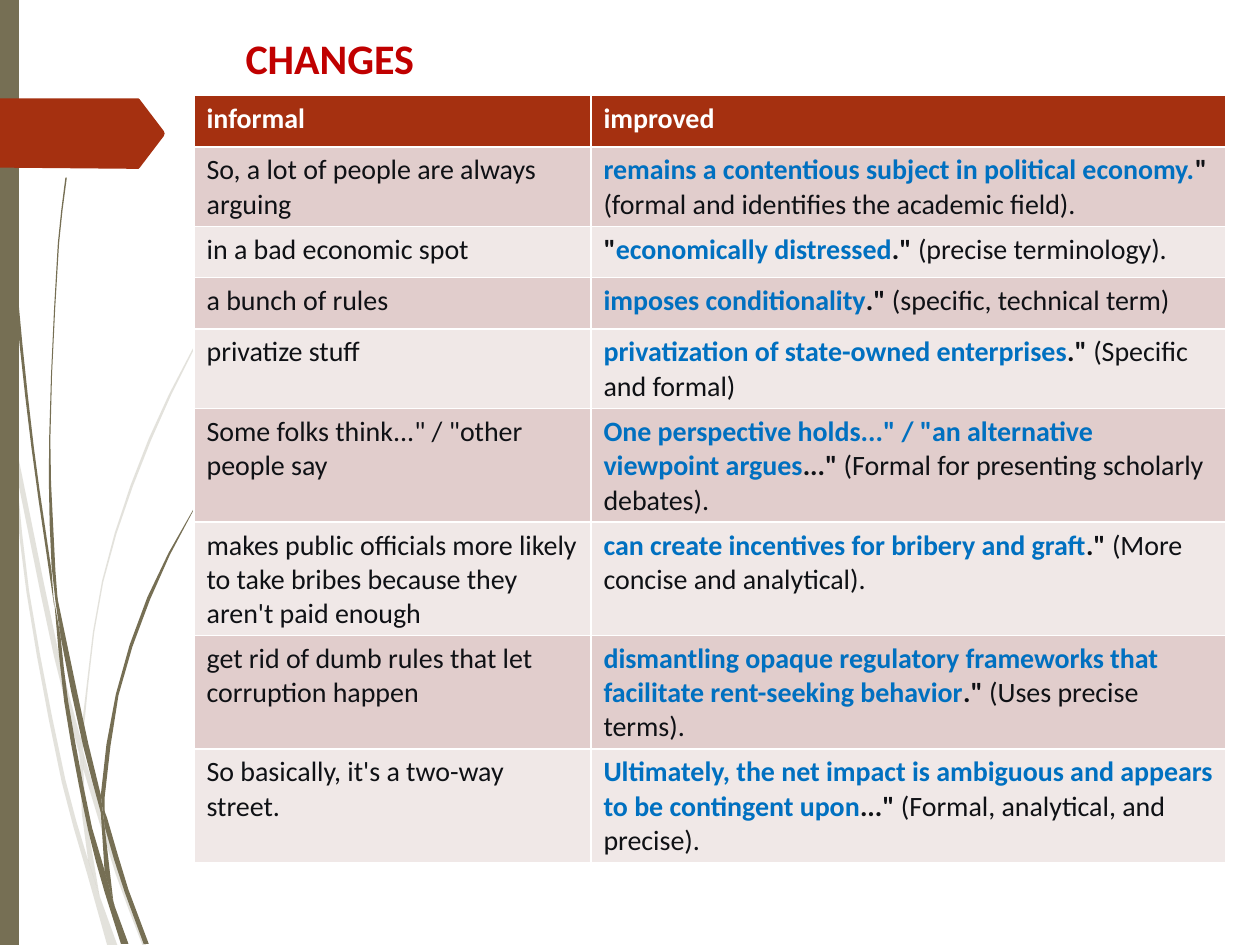
import math

import pptx
import pptx.dml.color
import pptx.enum.text
import pptx.oxml
import pptx.oxml.ns
import pptx.util
from pptx.enum.shapes import MSO_SHAPE

Pt = pptx.util.Pt

THEME = {
    "font": "Calibri", "title_size": 24, "cell_size": 16,
    "olive": "766F54", "rust": "A53010", "title": "C00000", "white": "FFFFFF",
    "ink": "0F1115", "accent": "0070C0", "bands": ("E1CDCC", "F0E8E7"),
}

TITLE = "CHANGES"
HEADERS = ("informal", "improved")
CHANGES = [
    ("So, a lot of people are always arguing",
     [("accent", "remains a contentious subject in political economy."), ("strong", "\" "),
      ("plain", "(formal and identifies the academic field).")]),
    ("in a bad economic spot",
     [("strong", "\""), ("accent", "economically distressed"), ("strong", ".\" "),
      ("plain", "(precise terminology).")]),
    ("a bunch of rules",
     [("accent", "imposes conditionality"), ("strong", ".\""),
      ("plain", " (specific, technical term)")]),
    ("privatize stuff",
     [("accent", "privatization of state-owned enterprises"), ("strong", ".\" "),
      ("plain", "(Specific and formal)")]),
    ("Some folks think...\" / \"other people say",
     [("accent", "One perspective holds...\" / \"an alternative viewpoint argues"),
      ("strong", "...\" "), ("plain", "(Formal for presenting scholarly debates).")]),
    ("makes public officials more likely to take bribes because they aren't paid enough",
     [("accent", "can create incentives for bribery and graft"), ("strong", ".\" "),
      ("plain", "(More concise and analytical).")]),
    ("get rid of dumb rules that let corruption happen",
     [("accent", "dismantling opaque regulatory frameworks that facilitate rent-seeking behavior"),
      ("strong", ".\""), ("plain", " (Uses precise terms).")]),
    ("So basically, it's a two-way street.",
     [("accent", "Ultimately, the net impact is ambiguous and appears to be contingent upon"),
      ("strong", "...\" "), ("plain", "(Formal, analytical, and precise).")]),
]
STYLES = {"header": ("white", True), "accent": ("accent", True),
          "strong": ("ink", True), "plain": ("ink", False)}
COLUMN_WIDTHS = (226.8, 362.9)
ROW_HEIGHT = 29.2

PALE_BLADES = [
    ([(5.8, 252), (4.3, 231.8), (0, 203)], [(0, 215.3), (5.8, 247.7)]),
    ([(9.4, 270.7), (31, 375.8), (45.4, 431.3)], [(46.1, 421.9), (33.8, 374.4), (7.9, 248.4)]),
    ([(47.5, 439.2), (66.2, 499.7), (81.4, 540)],
     [(83.5, 540), (68.4, 498.2), (49.7, 437), (47.5, 429.1)]),
    ([(5.8, 252), (15.1, 338.4), (35.3, 447.1), (49.7, 499), (61.2, 540)],
     [(67, 540), (56.9, 511.9), (50.4, 491.8), (37.4, 445.7), (16.6, 337.7), (9.4, 270.7)]),
    ([(45.4, 431.3), (46.8, 465.1), (50.4, 491.8), (56.9, 511.9)],
     [(49, 465.1), (47.5, 437.8)]),
    ([(45.4, 431.3), (47.5, 437.8), (47.5, 420.5), (59, 332.6), (86.4, 251.3),
      (123.1, 176.4), (144.7, 142.6), (168.5, 110.2)],
     [(144.7, 141.8), (123.1, 175.7), (85, 250.6), (58.3, 331.9), (46.1, 420.5)]),
]
DARK_BLADES = [
    ([(1.4, 0), (3.6, 79.2), (8.6, 167.8), (18, 255.6), (31, 346.3)],
     [(29.5, 326.2), (19.4, 255.6), (10.1, 167), (4.3, 78.5), (2.2, 0)]),
    ([(32.4, 339.8), (34.6, 363.6), (47.5, 426.2), (57.6, 464.4)],
     [(57.6, 454.3), (50.4, 424.8), (32.4, 339.8)]),
    ([(59, 461.5), (59.8, 472.3), (71.3, 509.8), (82.1, 539.3)],
     [(85, 539.3), (73.4, 508.3), (61.2, 467.3)]),
    ([(31, 343.4), (36.7, 401), (50.4, 474.5), (59.8, 509.8), (69.1, 539.3)],
     [(73.4, 539.3), (65.5, 517.7), (59.8, 497.5), (52.6, 473), (38.9, 400.3), (34.6, 363.6)]),
    ([(37.4, 101.5), (33.1, 139), (28.1, 251.3), (29.5, 323.3), (34.6, 363.6)],
     [(31.7, 326.2), (28.8, 251.3), (33.8, 139), (38.2, 101.5)]),
    ([(140.4, 247.7), (110.2, 291.6), (84.2, 341.3), (66.2, 396.7), (57.6, 454.3),
      (59.8, 472.3)],
     [(59.8, 455.8), (67.7, 397.4), (85.7, 342.7), (110.2, 292.3), (140.4, 247.7)]),
    ([(57.6, 454.3), (57.6, 464.4), (59.8, 498.2), (65.5, 517.7)],
     [(64.8, 515.5), (59.8, 472.3)]),
]
ARROW = [(0, 56.2), (79.2, 56.2), (79.9, 56.9), (93.6, 74.9), (94.1, 76.3),
         (93.6, 77.8), (79.9, 95.8), (79.2, 96.5), (0, 95.8)]


def color(value):
    return pptx.dml.color.RGBColor.from_string(value)


def smooth_edge(points):
    slopes = []
    for index, here in enumerate(points):
        before = points[max(index - 1, 0)]
        after = points[min(index + 1, len(points) - 1)]
        reach = (math.dist(before, here) + math.dist(here, after)) or 1
        slopes.append([(b - a) / reach for a, b in zip(before, after)])
    curve = [points[0]]
    for start, end, leave, arrive in zip(points, points[1:], slopes, slopes[1:]):
        length = math.dist(start, end)
        steps = min(3, math.ceil(length / 35))
        for step in range(1, steps + 1):
            t = step / steps
            blend = t * t * (3 - 2 * t)
            pull, push = t * (1 - t) ** 2 * length, t * t * (t - 1) * length
            curve.append(tuple(a + (b - a) * blend + m * pull + n * push
                               for a, b, m, n in zip(start, end, leave, arrive)))
    return curve


def paint(shape, fill, alpha=None):
    shape.shadow.inherit = False
    shape.line.fill.background()
    shape.fill.solid()
    shape.fill.fore_color.rgb = color(fill)
    if alpha:
        value = shape.fill._xPr.find(".//" + pptx.oxml.ns.qn("a:srgbClr"))
        value.append(pptx.oxml.parse_xml(
            f'<a:alpha {pptx.oxml.ns.nsdecls("a")} val="{alpha * 1000}"/>'))


def draw_outline(page, points, fill, alpha=None):
    corners = [(Pt(x), Pt(y)) for x, y in points]
    builder = page.shapes.build_freeform(*corners[0], scale=1.0)
    builder.add_line_segments(corners[1:], close=True)
    paint(builder.convert_to_shape(), fill, alpha)


def draw_blades(page, blades, alpha=None):
    for left, right in blades:
        draw_outline(page, smooth_edge(left) + smooth_edge(right), THEME["olive"], alpha)


def add_span(para, text, size, fill, bold):
    span = para.add_run()
    span.text = text
    span.font.name = THEME["font"]
    span.font.size = Pt(size)
    span.font.bold = bold
    span.font.color.rgb = color(fill)


def fill_cell(cell, spans, fill):
    cell.fill.solid()
    cell.fill.fore_color.rgb = color(fill)
    for style, text in spans:
        ink, bold = STYLES[style]
        add_span(cell.text_frame.paragraphs[0], text, THEME["cell_size"], THEME[ink], bold)


def add_changes_table(page):
    rows = [[[("header", text)] for text in HEADERS]]
    rows += [[[("plain", informal)], improved] for informal, improved in CHANGES]
    table = page.shapes.add_table(len(rows), len(HEADERS), Pt(110.9), Pt(54.7),
                                  Pt(sum(COLUMN_WIDTHS)), Pt(ROW_HEIGHT * len(rows))).table
    for column, width in zip(table.columns, COLUMN_WIDTHS):
        column.width = Pt(width)
    for number, row in enumerate(rows):
        table.rows[number].height = Pt(ROW_HEIGHT)
        fill = THEME["bands"][(number - 1) % 2] if number else THEME["rust"]
        for column, spans in enumerate(row):
            fill_cell(table.cell(number, column), spans, fill)


def main():
    deck = pptx.Presentation()
    deck.slide_width, deck.slide_height = Pt(720), Pt(540)
    page = deck.slides.add_slide(deck.slide_layouts[6])
    draw_blades(page, PALE_BLADES, alpha=20)
    draw_blades(page, DARK_BLADES)
    paint(page.shapes.add_shape(MSO_SHAPE.RECTANGLE, 0, 0, Pt(10.8), Pt(540)), THEME["olive"])
    draw_outline(page, ARROW, THEME["rust"])
    box = page.shapes.add_textbox(Pt(133.2), Pt(15.1), Pt(111.6), Pt(36))
    box.text_frame.word_wrap = False
    box.text_frame.auto_size = pptx.enum.text.MSO_AUTO_SIZE.SHAPE_TO_FIT_TEXT
    add_span(box.text_frame.paragraphs[0], TITLE, THEME["title_size"], THEME["title"], True)
    add_changes_table(page)
    deck.save("out.pptx")


if __name__ == "__main__":
    main()
